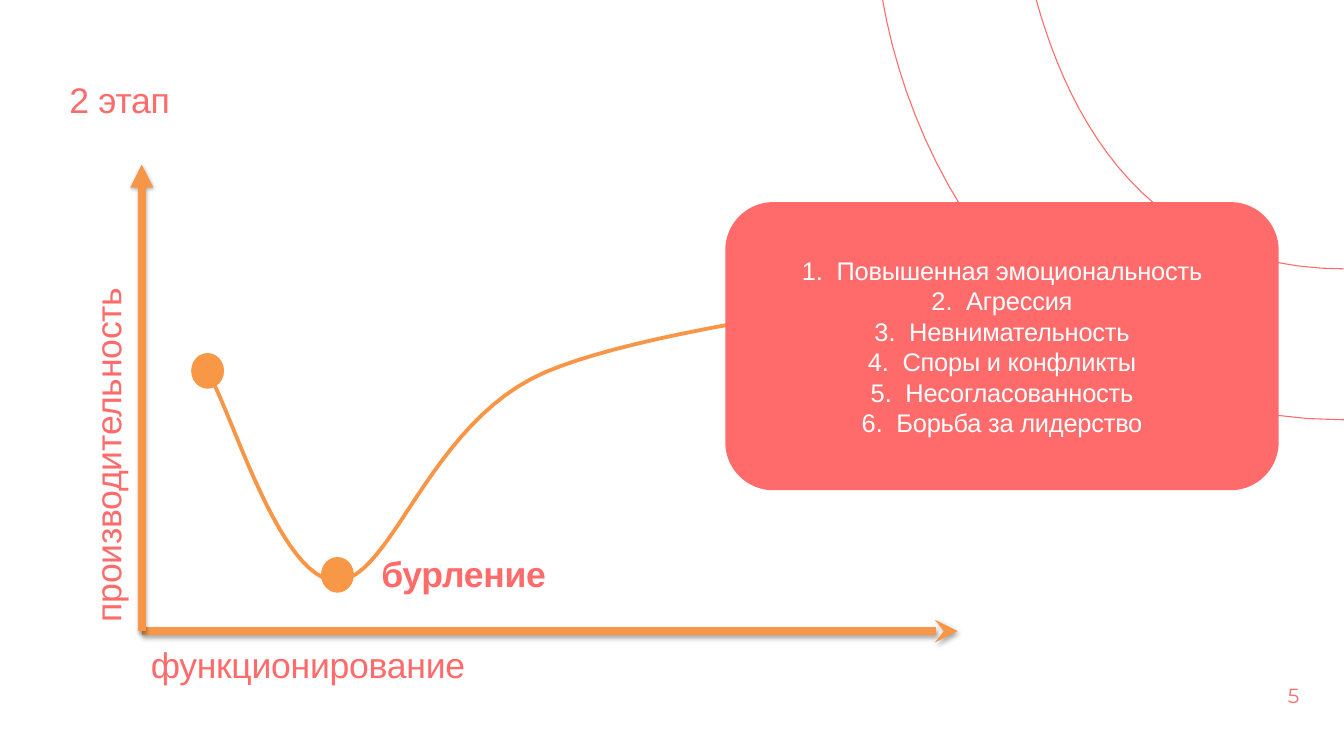
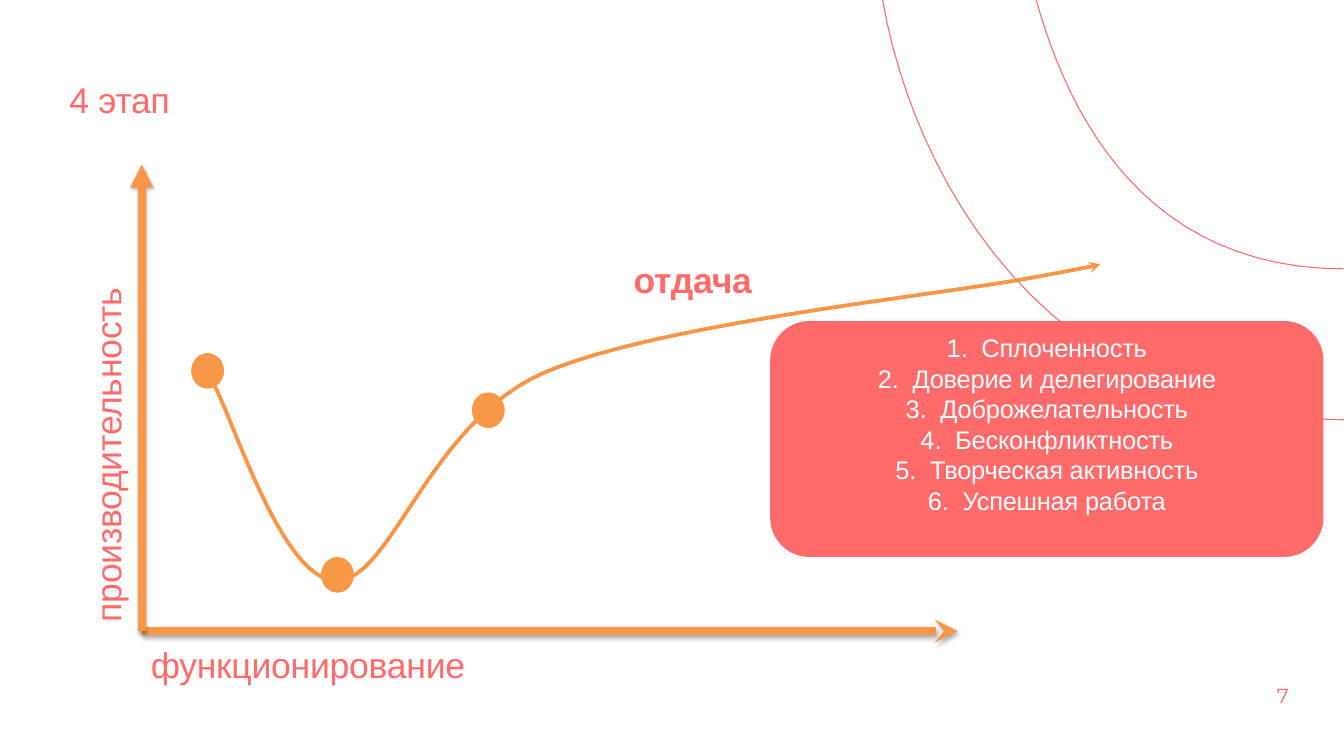
from typing import NamedTuple

from lxml import etree
from pptx import Presentation
from pptx.dml.color import RGBColor
from pptx.enum import shapes, text
from pptx.oxml import ns
from pptx.util import Inches, Pt

CORAL, AMBER, DOT, WHITE = "FF6B6B", "F79646", "F89745", "FFFFFF"
WIDE = Pt(1058)
HIGH = WIDE * 9 // 16
ORIGIN = (1.55, 6.9)
STEPS = 24

Point = tuple[float, float]


class Box(NamedTuple):
    left: float
    top: float
    width: float
    height: float

    def emu(self) -> list[int]:
        return [Inches(v) for v in self]


class Axis(NamedTuple):
    end: Point
    head: str


class Label(NamedTuple):
    words: str
    box: Box
    bold: bool = False
    turn: int = 0


class Stage(NamedTuple):
    title: str
    name: Label
    dots: int
    card: Box
    foot: float
    traits: list[str]
    page: str
    spot: Box


# Each curve is a start point followed by triples of Bezier control points.
RINGS = [
    [(11.33, 0), (11.7, 1.33), (12.56, 2.94), (14.7, 2.94)],
    [(9.65, 0), (9.98, 1.9), (11.41, 4.59), (14.7, 4.59)],
]
TREND = [
    (2.28, 4.09),
    (2.52, 4.46), (3.06, 6.35), (3.68, 6.35),
    (4.29, 6.34), (4.68, 4.62), (5.96, 4.07),
    (7.25, 3.52), (10.36, 3.22), (11.37, 3.02),
    (12.39, 2.83), (11.92, 2.91), (12.03, 2.89),
]
AXES = [Axis((10.47, 6.9), "stealth"), Axis((1.55, 1.8), "triangle")]
NAMES = [
    Label("функционирование", Box(1.55, 6.98, 5.51, 0.67)),
    Label("производительность", Box(-1.83, 3.59, 6.03, 0.59), turn=270),
]
DOTS = [(2.09, 3.86), (3.51, 6.09), (5.16, 4.29)]

STAGES = [
    Stage(
        "2 этап", Label("бурление", Box(4.07, 5.98, 5.51, 0.82), bold=True), 2,
        Box(7.93, 2.21, 6.05, 3.15), 0.05,
        ["Повышенная эмоциональность", "Агрессия", "Невнимательность",
         "Споры и конфликты", "Несогласованность", "Борьба за лидерство"],
        "5", Box(14.07, 7.46, 0.2, 0.28),
    ),
    Stage(
        "4 этап", Label("отдача", Box(6.83, 2.77, 5.51, 0.82), bold=True), 3,
        Box(8.42, 3.51, 6.05, 2.58), 0.38,
        ["Сплоченность", "Доверие и делегирование", "Доброжелательность",
         "Бесконфликтность", "Творческая активность", "Успешная работа"],
        "7", Box(13.95, 7.46, 0.31, 0.28),
    ),
]


def paint(part, color: str) -> None:
    """Give a fill or a line one solid colour."""
    fill = part.fill if hasattr(part, "fill") else part
    fill.solid()
    fill.fore_color.rgb = RGBColor.from_string(color)


def child(node, tag: str, **attrs: str):
    kid = etree.SubElement(node, ns.qn(tag))
    for key, value in attrs.items():
        kid.set(key, value)
    return kid


def stroke(line, color: str, width: float, head: str = "") -> None:
    paint(line, color)
    line.width = Pt(width)
    if head:
        child(line._get_or_add_ln(), "a:tailEnd", type=head)


def sample(curve: list[Point]) -> list[Point]:
    """Turn Bezier control points into points along the curve."""
    dots = [curve[0]]
    for i in range(0, len(curve) - 1, 3):
        part = curve[i:i + 4]
        for step in range(1, STEPS + 1):
            t = step / STEPS
            s = 1 - t
            mix = (s ** 3, 3 * s * s * t, 3 * s * t * t, t ** 3)
            x, y = (sum(m * p[k] for m, p in zip(mix, part)) for k in (0, 1))
            dots.append((x, y))
    return dots


def trace(slide, curves: list[list[Point]], color: str, width: float,
          head: str = "") -> None:
    """Draw open curves as one freeform."""
    paths = [[(Inches(x), Inches(y)) for x, y in sample(curve)]
             for curve in curves]
    pen = slide.shapes.build_freeform(*paths[0][0])
    for i, dots in enumerate(paths):
        if i:
            pen.move_to(*dots[0])
        pen.add_line_segments(dots[1:], close=False)
    shape = pen.convert_to_shape()
    shape.shadow.inherit = False
    shape.fill.background()
    stroke(shape.line, color, width, head)


def solid(slide, kind, box: Box, color: str):
    shape = slide.shapes.add_shape(kind, *box.emu())
    shape.shadow.inherit = False
    paint(shape.fill, color)
    shape.line.fill.background()
    return shape


def style(para, size: float, color: str, gap: int, face: str = "Arial",
          bold: bool = False) -> None:
    """Set the font of a paragraph; gap is letter spacing in 1/100 pt."""
    font = para.font
    font.name, font.size, font.bold = face, Pt(size), bold
    paint(font.fill, color)
    for run in para.runs:
        run._r.get_or_add_rPr().set("spc", str(gap))


def write(slide, label: Label) -> None:
    shape = slide.shapes.add_textbox(*label.box.emu())
    shape.rotation = label.turn
    frame = shape.text_frame
    frame.word_wrap = True
    frame.text = label.words
    style(frame.paragraphs[0], 28, CORAL, -20, bold=label.bold)


def number(slide, page: str, spot: Box) -> None:
    frame = slide.shapes.add_textbox(*spot.emu()).text_frame
    frame.word_wrap = True
    frame.margin_left = frame.margin_right = frame.margin_bottom = 0
    frame.margin_top = Inches(0.01)
    frame.text = page
    para = frame.paragraphs[0]
    para.space_before = Pt(0.8)
    style(para, 16, CORAL, 10, "Montserrat")
    para._p.get_or_add_pPr().set("marL", str(Inches(0.01)))


def arrow(slide, axis: Axis) -> None:
    ends = [Inches(v) for v in (*ORIGIN, *axis.end)]
    line = slide.shapes.add_connector(shapes.MSO_CONNECTOR.STRAIGHT, *ends)
    stroke(line.line, AMBER, 6, axis.head)
    effects = child(line._element.spPr, "a:effectLst")
    shade = child(effects, "a:outerShdw", blurRad=str(Pt(3.1)),
                  dist=str(Pt(1.8)), dir="5400000", rotWithShape="0")
    child(child(shade, "a:srgbClr", val="000000"), "a:alpha", val="35000")


def card(slide, stage: Stage) -> None:
    """Draw the rounded box with its numbered list."""
    shape = solid(slide, shapes.MSO_SHAPE.ROUNDED_RECTANGLE, stage.card, CORAL)
    frame = shape.text_frame
    frame.word_wrap = True
    frame.vertical_anchor = text.MSO_ANCHOR.MIDDLE
    frame.margin_bottom = Inches(stage.foot)
    frame.text = "\n".join(stage.traits)
    for para in frame.paragraphs:
        para.alignment = text.PP_ALIGN.CENTER
        style(para, 20, WHITE, -20)
        props = para._p.get_or_add_pPr()
        props.set("marL", str(Inches(0.38)))
        props.set("indent", str(-Inches(0.38)))
        bullet = etree.Element(ns.qn("a:buAutoNum"), type="arabicPeriod")
        props.find(ns.qn("a:defRPr")).addprevious(bullet)


def build(deck, stage: Stage) -> None:
    slide = deck.slides.add_slide(deck.slide_layouts[6])
    paint(slide.background.fill, WHITE)
    trace(slide, RINGS, CORAL, 0.85)
    number(slide, stage.page, stage.spot)
    write(slide, Label(stage.title, Box(0.66, 0.8, 12.16, 1.21)))
    trace(slide, [TREND], AMBER, 3, "stealth")
    for axis in AXES:
        arrow(slide, axis)
    for label in (*NAMES, stage.name):
        write(slide, label)
    for spot in DOTS[:stage.dots]:
        solid(slide, shapes.MSO_SHAPE.OVAL, Box(*spot, 0.36, 0.39), DOT)
    card(slide, stage)


def main() -> None:
    deck = Presentation()
    deck.slide_width, deck.slide_height = WIDE, HIGH
    for stage in STAGES:
        build(deck, stage)
    deck.save("out.pptx")


if __name__ == "__main__":
    main()
